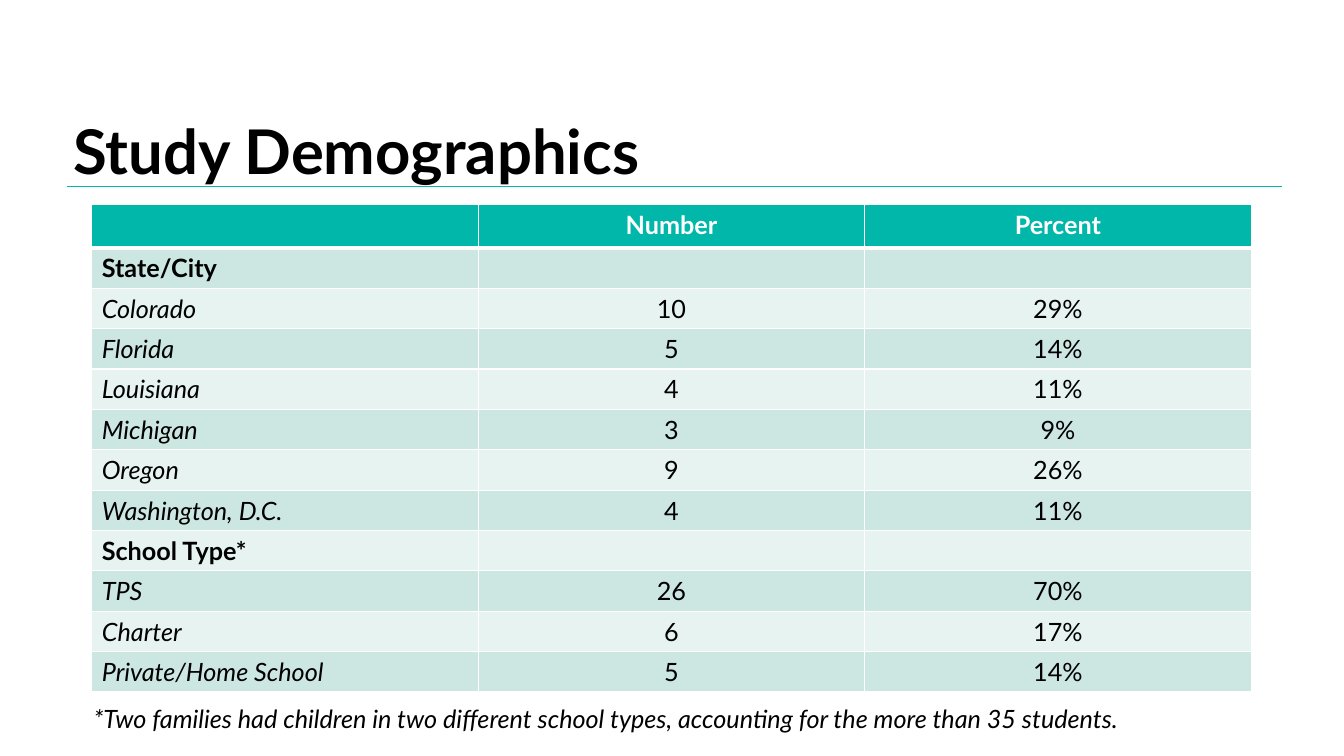
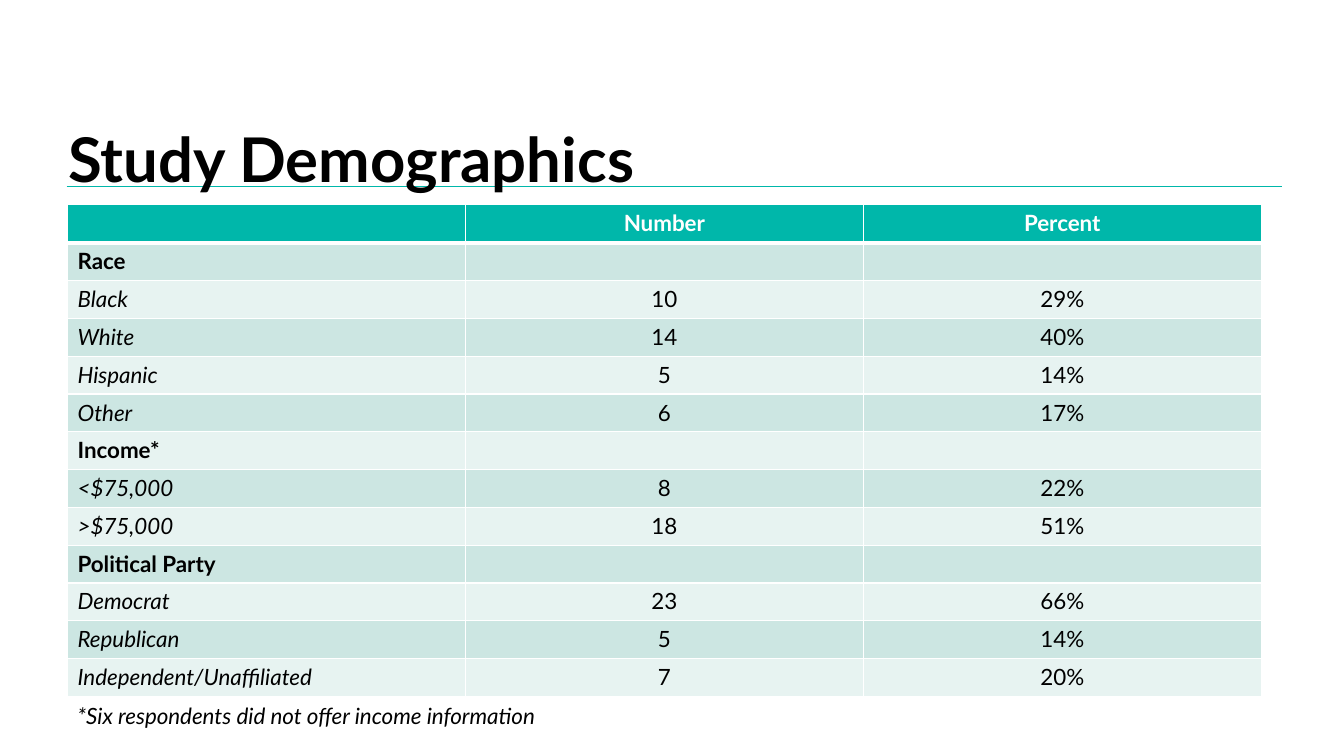
import pptx
import pptx.util
import pptx.dml.color
import pptx.enum.shapes
import pptx.enum.text
import pptx.oxml.ns
import lxml.etree
from dataclasses import dataclass

Inches, Pt = pptx.util.Inches, pptx.util.Pt
Align = pptx.enum.text.PP_ALIGN


@dataclass(frozen=True)
class Theme:
    font: str = "Lato"
    teal: str = "00B7AA"
    dark: str = "CCE6E2"
    light: str = "E7F3F1"
    white: str = "FFFFFF"
    black: str = "000000"
    title: int = 44
    rule: float = 0.5
    thin: int = 1
    thick: int = 3


theme = Theme()
color = pptx.dml.color.RGBColor.from_string
qn = pptx.oxml.ns.qn


def style(para, size, ink, bold=False, slant=False):
    for run in para.runs:
        font = run.font
        font.name, font.size = theme.font, Pt(size)
        font.bold, font.italic = bold, slant
        font.color.rgb = color(ink)


def border(cell, top, bottom):
    props = cell._tc.get_or_add_tcPr()
    sides = {"lnL": theme.thin, "lnR": theme.thin, "lnT": top, "lnB": bottom}
    for side, width in sides.items():
        line = lxml.etree.SubElement(props, qn("a:" + side), w=str(int(Pt(width))))
        fill = lxml.etree.SubElement(line, qn("a:solidFill"))
        lxml.etree.SubElement(fill, qn("a:srgbClr"), val=theme.white)


# Content: a row with a label alone opens a group
pages = [
    dict(
        title=(0.63, 0.81), table=(0.91, 2.03, 11.5, 4.83), head=0.43, size=18,
        note=(0.83, 6.93, 11.67, 0.41),
        text="*Two families had children in two different school types, "
             "accounting for the more than 35 students.",
        rows=[
            ("State/City",),
            ("Colorado", "10", "29%"),
            ("Florida", "5", "14%"),
            ("Louisiana", "4", "11%"),
            ("Michigan", "3", "9%"),
            ("Oregon", "9", "26%"),
            ("Washington, D.C.", "4", "11%"),
            ("School Type*",),
            ("TPS", "26", "70%"),
            ("Charter", "6", "17%"),
            ("Private/Home School", "5", "14%"),
        ],
    ),
    dict(
        title=(0.58, 0.89), table=(0.67, 2.03, 11.84, 4.88), head=0.38, size=16,
        note=(0.67, 6.92, 5.67, 0.37),
        text="*Six respondents did not offer income information",
        rows=[
            ("Race",),
            ("Black", "10", "29%"),
            ("White", "14", "40%"),
            ("Hispanic", "5", "14%"),
            ("Other", "6", "17%"),
            ("Income*",),
            ("<$75,000", "8", "22%"),
            (">$75,000", "18", "51%"),
            ("Political Party",),
            ("Democrat", "23", "66%"),
            ("Republican", "5", "14%"),
            ("Independent/Unaffiliated", "7", "20%"),
        ],
    ),
]

deck = pptx.Presentation()
deck.slide_width, deck.slide_height = Inches(13.33), Inches(7.5)

for page in pages:
    slide = deck.slides.add_slide(deck.slide_layouts[5])
    size = page["size"]

    # Title
    title = slide.shapes.title
    title.left, title.top = map(Inches, page["title"])
    title.width, title.height = Inches(7.8), Inches(1.45)
    frame = title.text_frame
    frame.text = "Study Demographics"
    frame.word_wrap = True
    frame.auto_size = pptx.enum.text.MSO_AUTO_SIZE.NONE
    frame.vertical_anchor = pptx.enum.text.MSO_ANCHOR.MIDDLE
    para = frame.paragraphs[0]
    para.alignment, para.line_spacing = Align.LEFT, 0.9
    style(para, theme.title, theme.black, bold=True)

    # Rule behind the title
    rule = slide.shapes.add_connector(
        pptx.enum.shapes.MSO_CONNECTOR.STRAIGHT,
        Inches(0.66), Inches(1.85), Inches(12.72), Inches(1.85))
    rule.line.color.rgb = color(theme.teal)
    rule.line.width = Pt(theme.rule)
    lxml.etree.SubElement(rule.element.spPr, qn("a:effectLst"))
    title.element.addprevious(rule.element)

    # Table
    rows = [("", "Number", "Percent")] + page["rows"]
    left, top, width, height = page["table"]
    table = slide.shapes.add_table(
        len(rows), 3, Inches(left), Inches(top), Inches(width), Inches(height)).table
    for col in table.columns:
        col.width = Inches(width / 3)
    step = (height - page["head"]) / len(page["rows"])
    for r, row in enumerate(rows):
        head, group = r == 0, len(row) == 1
        table.rows[r].height = Inches(page["head"] if head else step)
        shade = theme.teal if head else theme.dark if r % 2 else theme.light
        for c in range(3):
            cell = table.cell(r, c)
            border(cell, theme.thick if r == 1 else theme.thin,
                   theme.thick if head else theme.thin)
            cell.fill.solid()
            cell.fill.fore_color.rgb = color(shade)
            para = cell.text_frame.paragraphs[0]
            para.alignment = Align.CENTER if c else Align.LEFT
            if c < len(row) and row[c]:
                para.text = row[c]
                style(para, size, theme.white if head else theme.black,
                      bold=head or group, slant=c == 0 and not group)
            else:
                # Keep empty cells as low as the filled ones
                end = lxml.etree.SubElement(
                    para._p, qn("a:endParaRPr"), sz=str(size * 100))
                lxml.etree.SubElement(end, qn("a:latin"), typeface=theme.font)

    # Footnote
    note = slide.shapes.add_textbox(*map(Inches, page["note"]))
    frame = note.text_frame
    frame.text = page["text"]
    frame.word_wrap = True
    frame.auto_size = pptx.enum.text.MSO_AUTO_SIZE.SHAPE_TO_FIT_TEXT
    style(frame.paragraphs[0], size, theme.black, slant=True)

deck.save("out.pptx")
